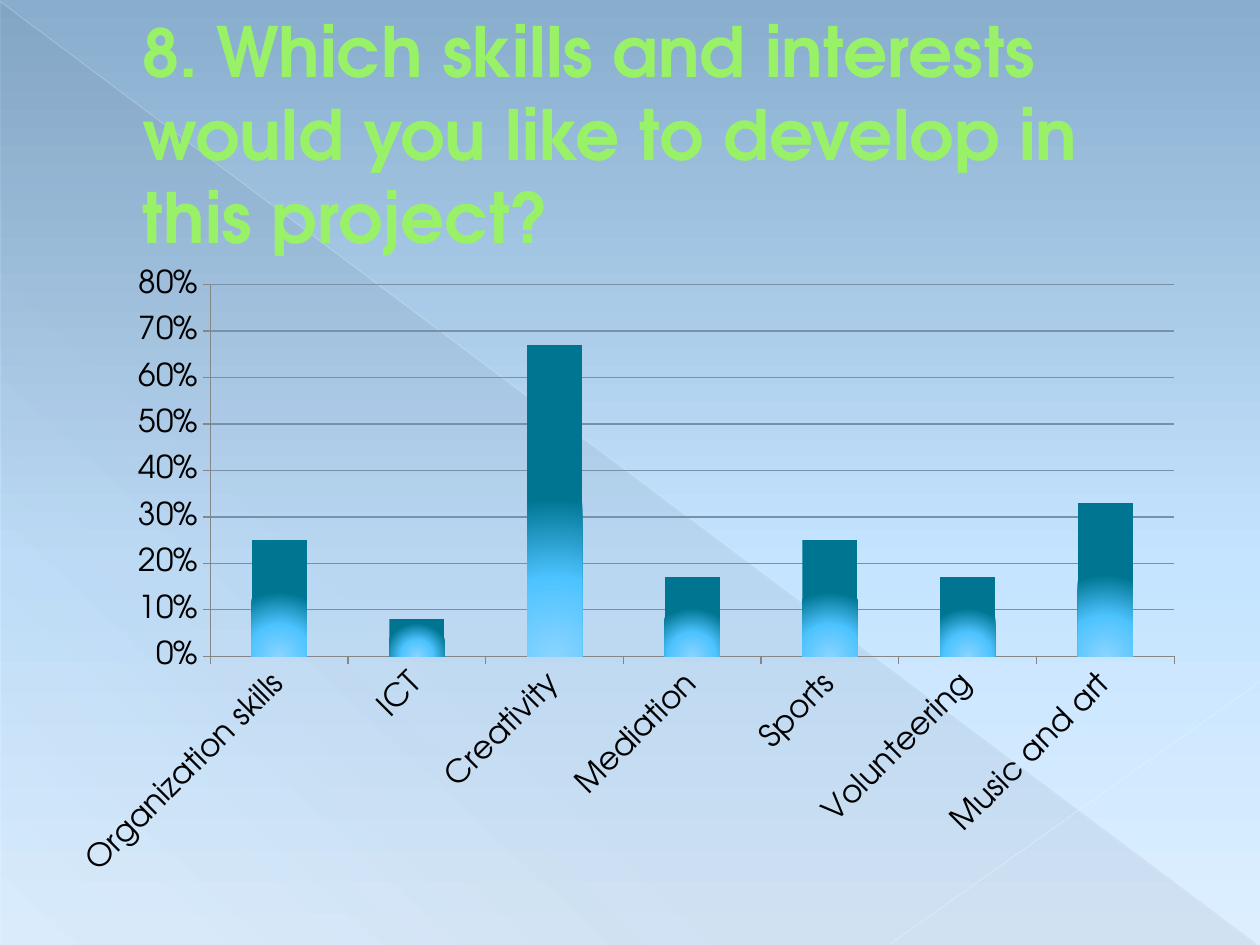
from dataclasses import dataclass

from lxml import etree
from pptx import Presentation
from pptx.chart.data import CategoryChartData
from pptx.dml.color import RGBColor
from pptx.enum import chart as ch, shapes, text
from pptx.oxml import parse_xml
from pptx.oxml.ns import nsdecls, qn
from pptx.util import Inches, Pt


@dataclass(frozen=True)
class Theme:
    font: str = "TeX Gyre Adventor"
    title: str = "98F167"
    edge: str = "589129"
    ink: str = "000000"
    axis: str = "868686"
    grid: str = "7890A8"
    shade: str = "4E5B6F"
    num_size: float = 37.8
    head_size: float = 39.6
    label_size: int = 18


@dataclass(frozen=True)
class Stop:
    pos: int
    color: str
    alpha: int = 100


@dataclass(frozen=True)
class Ray:
    start: tuple[float, float]
    end: tuple[float, float]
    color: str
    width: float
    alpha: int


@dataclass(frozen=True)
class Skill:
    name: str
    share: float


THEME = Theme()
SKY = [Stop(0, "88ADCD"), Stop(60, "C5E4FF"), Stop(100, "DDEFFF")]
SHADE = [Stop(0, THEME.shade, 10), Stop(70, THEME.shade, 8), Stop(100, THEME.shade, 1)]
GLOW = [Stop(0, "8AD4FF"), Stop(50, "4DC3FF"), Stop(100, "007592")]
LINEAR = '<a:lin ang="{}" scaled="0"/>'
RADIAL = '<a:path path="circle"><a:fillToRect l="50000" t="100000" r="50000" b="0"/></a:path>'
RAYS = [
    Ray((0, 0.01), (9.99, 7.49), "EAF5FF", 0.39, 35),
    Ray((10, 5.41), (7.07, 7.49), "ECF6FF", 0.47, 45),
]
SKILLS = [
    Skill("Organization skills", 0.25),
    Skill("ICT", 0.08),
    Skill("Creativity", 0.67),
    Skill("Mediation", 0.17),
    Skill("Sports", 0.25),
    Skill("Volunteering", 0.17),
    Skill("Music and art", 0.33),
]


def rgb(value: str) -> RGBColor:
    return RGBColor.from_string(value)


def fade(color, alpha: int) -> None:
    """Add an alpha value to a colour element."""
    etree.SubElement(color, qn("a:alpha")).set("val", str(alpha * 1000))


def blend(fill, holder, stops: list[Stop], course: str) -> None:
    """Give the holder a gradient of the stops that runs along the course."""
    fill.gradient()
    old = holder.find(qn("a:gradFill"))
    marks = "".join(
        f'<a:gs pos="{s.pos * 1000}"><a:srgbClr val="{s.color}">'
        f'<a:alpha val="{s.alpha * 1000}"/></a:srgbClr></a:gs>'
        for s in stops
    )
    new = parse_xml(
        f'<a:gradFill {nsdecls("a")} rotWithShape="1">'
        f"<a:gsLst>{marks}</a:gsLst>{course}</a:gradFill>"
    )
    holder.replace(old, new)


def draw_ray(slide, ray: Ray) -> None:
    ends = [Inches(n) for n in ray.start + ray.end]
    line = slide.shapes.add_connector(shapes.MSO_CONNECTOR.STRAIGHT, *ends)
    line.line.color.rgb = rgb(ray.color)
    line.line.width = Pt(ray.width)
    props = line._element.spPr
    fade(props.find(".//" + qn("a:srgbClr")), ray.alpha)
    etree.SubElement(props, qn("a:effectLst"))


def draw_back(slide) -> None:
    fill = slide.background.fill
    fill.solid()
    holder = slide._element.find(".//" + qn("p:bgPr"))
    blend(fill, holder, SKY, LINEAR.format(90 * 60000))
    wedge = slide.shapes.add_shape(
        shapes.MSO_SHAPE.RIGHT_TRIANGLE,
        Inches(0.01), Inches(0.02), Inches(9.98), Inches(7.48),
    )
    wedge.shadow.inherit = False
    wedge.line.fill.background()
    blend(wedge.fill, wedge._element.spPr, SHADE, LINEAR.format(133 * 60000))
    for ray in RAYS:
        draw_ray(slide, ray)


def draw_title(slide) -> None:
    box = slide.shapes.add_textbox(Inches(0.5), Inches(0.29), Inches(9), Inches(1.53))
    frame = box.text_frame
    frame.word_wrap = True
    frame.vertical_anchor = text.MSO_ANCHOR.MIDDLE
    para = frame.paragraphs[0]
    para._p.get_or_add_pPr().set("marL", str(Inches(0.53)))
    parts = [
        ("8. ", THEME.num_size),
        ("Which skills and interests would you like to develop in this project?",
         THEME.head_size),
    ]
    for words, size in parts:
        run = para.add_run()
        run.text = words
        font = run.font
        font.name, font.size, font.bold = THEME.font, Pt(size), True
        font.color.rgb = rgb(THEME.title)
        edge = parse_xml(
            f'<a:ln {nsdecls("a")} w="{Pt(0.5)}"><a:solidFill>'
            f'<a:srgbClr val="{THEME.edge}"/></a:solidFill></a:ln>'
        )
        run._r.get_or_add_rPr().insert(0, edge)


def place_plot(chart, x: float, y: float, w: float, h: float) -> None:
    """Fix the inner plot area, in fractions of the chart."""
    area = chart._chartSpace.chart.plotArea
    for old in area.findall(qn("c:layout")):
        area.remove(old)
    sizes = "".join(f'<c:{k} val="{v}"/>' for k, v in zip("xywh", (x, y, w, h)))
    area.insert(0, parse_xml(
        f'<c:layout {nsdecls("c")}><c:manualLayout><c:layoutTarget val="inner"/>'
        f'<c:xMode val="edge"/><c:yMode val="edge"/>{sizes}'
        "</c:manualLayout></c:layout>"
    ))


def draw_chart(slide) -> None:
    data = CategoryChartData(number_format="0%")
    data.categories = [s.name for s in SKILLS]
    data.add_series("Series 1", [s.share for s in SKILLS])
    chart = slide.shapes.add_chart(
        ch.XL_CHART_TYPE.COLUMN_CLUSTERED,
        Inches(0.5), Inches(2.06), Inches(9), Inches(5), data,
    ).chart
    chart.has_legend = chart.has_title = False
    chart.font.name, chart.font.size = THEME.font, Pt(THEME.label_size)
    chart.font.color.rgb = rgb(THEME.ink)
    place_plot(chart, 0.13, 0.04, 0.85, 0.59)

    plot = chart.plots[0]
    plot.gap_width = 150
    plot.vary_by_categories = False
    bars = plot.series[0]
    bars.invert_if_negative = False
    fill = bars.format.fill
    fill.solid()
    blend(fill, bars._element.find(qn("c:spPr")), GLOW, RADIAL)

    cats, vals = chart.category_axis, chart.value_axis
    for axis in (cats, vals):
        axis.major_tick_mark = ch.XL_TICK_MARK.OUTSIDE
        axis.format.line.color.rgb = rgb(THEME.axis)
        axis.format.line.width = Pt(0.75)
        font = axis.tick_labels.font
        font.name, font.size = THEME.font, Pt(THEME.label_size)
        font.color.rgb = rgb(THEME.ink)
    cats._element.find(".//" + qn("a:bodyPr")).set("rot", str(-45 * 60000))
    vals.minimum_scale, vals.maximum_scale, vals.major_unit = 0, 0.8, 0.1
    vals.tick_labels.number_format = "0%"
    vals.tick_labels.number_format_is_linked = False
    vals.has_major_gridlines = True
    grid = vals.major_gridlines.format.line
    grid.color.rgb, grid.width = rgb(THEME.grid), Pt(0.75)


def main() -> None:
    deck = Presentation()
    deck.slide_width, deck.slide_height = Inches(10), Inches(7.5)
    slide = deck.slides.add_slide(deck.slide_layouts[6])
    draw_back(slide)
    draw_title(slide)
    draw_chart(slide)
    deck.save("out.pptx")


if __name__ == "__main__":
    main()
